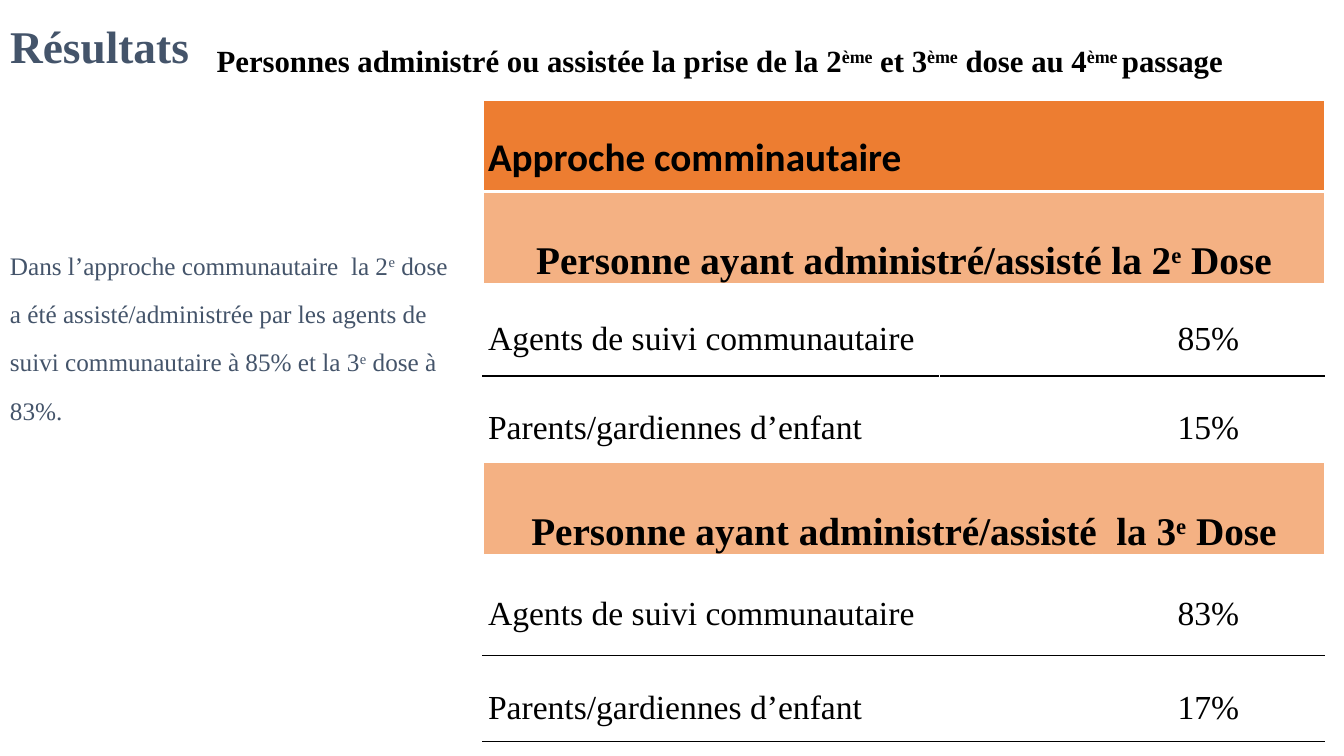
from lxml.etree import SubElement
from pptx import Presentation
from pptx.dml.color import RGBColor
from pptx.enum.text import MSO_ANCHOR as Anchor, MSO_AUTO_SIZE as AutoSize, PP_ALIGN as Align
from pptx.oxml.ns import qn
from pptx.util import Inches, Pt

BLACK = RGBColor(0x00, 0x00, 0x00)
WHITE = RGBColor(0xFF, 0xFF, 0xFF)
SLATE = RGBColor(0x44, 0x54, 0x6A)
ORANGE = RGBColor(0xED, 0x7D, 0x31)
PEACH = RGBColor(0xF4, 0xB1, 0x83)
SERIF = "Times New Roman"

COLUMN_WIDTHS = (4.53, 0.38, 1.13, 2.31)
AGENTS = "Agents de suivi communautaire"
PARENTS = "Parents/gardiennes d’enfant"


def write_text(frame, marked, size, color=BLACK, bold=False, font=SERIF,
               spacing=1.5, after=10, align=Align.LEFT):
    """Fill the first paragraph, raising the parts enclosed in ^ signs."""
    paragraph = frame.paragraphs[0]
    paragraph.alignment = align
    paragraph.line_spacing = spacing
    paragraph.space_after = Pt(after)
    for index, part in enumerate(marked.split("^")):
        run = paragraph.add_run()
        run.text = part
        run.font.size = Pt(size)
        run.font.name = font
        run.font.bold = bold
        run.font.color.rgb = color
        if index % 2:
            run._r.get_or_add_rPr().set("baseline", "30000")


def add_heading(slide, left, top, width, height):
    """Place the section name in the title placeholder."""
    heading = slide.shapes.title
    heading.left, heading.top = Inches(left), Inches(top)
    heading.width, heading.height = Inches(width), Inches(height)
    frame = heading.text_frame
    frame.auto_size = AutoSize.NONE
    frame.vertical_anchor = Anchor.MIDDLE
    write_text(frame, "Résultats", 32.4, SLATE, True, spacing=0.9, after=0)


def add_text_region(slide, left, top, width, height):
    """Add a wrapping text box and return its frame."""
    region = slide.shapes.add_textbox(
        Inches(left), Inches(top), Inches(width), Inches(height))
    region.text_frame.word_wrap = True
    return region.text_frame


def add_commentary(slide, left, top, width, height):
    """Add the reading of the results beside the table."""
    frame = add_text_region(slide, left, top, width, height)
    frame.margin_top = Inches(1.3)
    write_text(
        frame,
        "Dans l’approche communautaire  la 2^e^ dose a été assisté/administrée "
        "par les agents de suivi communautaire à 85% et la 3^e^ dose à 83%.",
        18, SLATE, spacing=1.6)


def add_subject(slide, left, top, width, height):
    """Add the subject line next to the heading."""
    frame = add_text_region(slide, left, top, width, height)
    frame.auto_size = AutoSize.SHAPE_TO_FIT_TEXT
    write_text(
        frame,
        "Personnes administré ou assistée la prise de la 2^ème^ et 3^ème^ dose "
        "au 4^ème ^passage",
        22, bold=True)


def style_cell(cell, fill, top_rule, bottom_rule, bottom_width):
    """Set the borders, fill and margins of a cell."""
    properties = cell._tc.get_or_add_tcPr()
    borders = (("a:lnL", WHITE, 1), ("a:lnR", WHITE, 1),
               ("a:lnT", top_rule, 1), ("a:lnB", bottom_rule, bottom_width))
    for tag, color, width in borders:
        line = SubElement(properties, qn(tag), w=str(Pt(width)))
        solid = SubElement(line, qn("a:solidFill"))
        SubElement(solid, qn("a:srgbClr"), val=str(color))
    cell.fill.solid()
    cell.fill.fore_color.rgb = fill
    cell.margin_left = cell.margin_right = Inches(0.05)
    cell.margin_top = cell.margin_bottom = 0


def fill_row(table, index, fill, rules, spans, entries, bottom_width=1):
    """Style one row, merge its spans and write its anchored entries."""
    for column in range(len(COLUMN_WIDTHS)):
        style_cell(table.cell(index, column), fill, *rules, bottom_width)
    for first, last in spans:
        table.cell(index, first).merge(table.cell(index, last))
    for column, text, anchor, text_format in entries:
        cell = table.cell(index, column)
        cell.vertical_anchor = anchor
        write_text(cell.text_frame, text, **text_format)


def add_dose_table(slide, left, top, width, height):
    """Add the table of who gave or assisted each dose."""
    row_heights = (0.9, 0.91, 0.92, 0.86, 0.91, 1, 0.86)
    table = slide.shapes.add_table(
        len(row_heights), len(COLUMN_WIDTHS),
        Inches(left), Inches(top), Inches(width), Inches(height)).table
    for column, column_width in zip(table.columns, COLUMN_WIDTHS):
        column.width = Inches(column_width)
    for row, row_height in zip(table.rows, row_heights):
        row.height = Inches(row_height)

    full_width = [(0, 3)]
    plain = (WHITE, WHITE)
    banner = {"size": 28, "bold": True, "font": "Calibri"}
    fill_row(table, 0, ORANGE, plain, full_width,
             [(0, "Approche comminautaire", Anchor.MIDDLE, banner)], 3)

    section = {"size": 28, "bold": True, "align": Align.CENTER}
    for index, text in ((1, "Personne ayant administré/assisté la 2^e^ Dose"),
                        (4, "Personne ayant administré/assisté  la 3^e^ Dose")):
        fill_row(table, index, PEACH, plain, full_width,
                 [(0, text, Anchor.BOTTOM, section)])

    shares = (
        (2, AGENTS, "85%", (WHITE, BLACK), [(0, 2)]),
        (3, PARENTS, "15%", (BLACK, WHITE), [(1, 2)]),
        (5, AGENTS, "83%", (WHITE, BLACK), [(0, 1)]),
        (6, PARENTS, "17%", (BLACK, BLACK), [(0, 1)]),
    )
    for index, person, share, rules, spans in shares:
        fill_row(table, index, WHITE, rules, spans, [
            (0, person, Anchor.MIDDLE, {"size": 24}),
            (3, share, Anchor.MIDDLE, {"size": 24, "align": Align.CENTER}),
        ])


def main():
    """Build the results slide and save it."""
    deck = Presentation()
    deck.slide_width, deck.slide_height = Inches(13.33), Inches(7.5)
    slide = deck.slides.add_slide(deck.slide_layouts.get_by_name("Title Only"))
    add_heading(slide, 0, 0.18, 4.91, 0.61)
    add_commentary(slide, 0, 1, 4.59, 6.36)
    add_subject(slide, 2.05, 0.18, 11.28, 0.59)
    add_dose_table(slide, 4.79, 1, 8.35, 6.36)
    deck.save("out.pptx")


if __name__ == "__main__":
    main()
